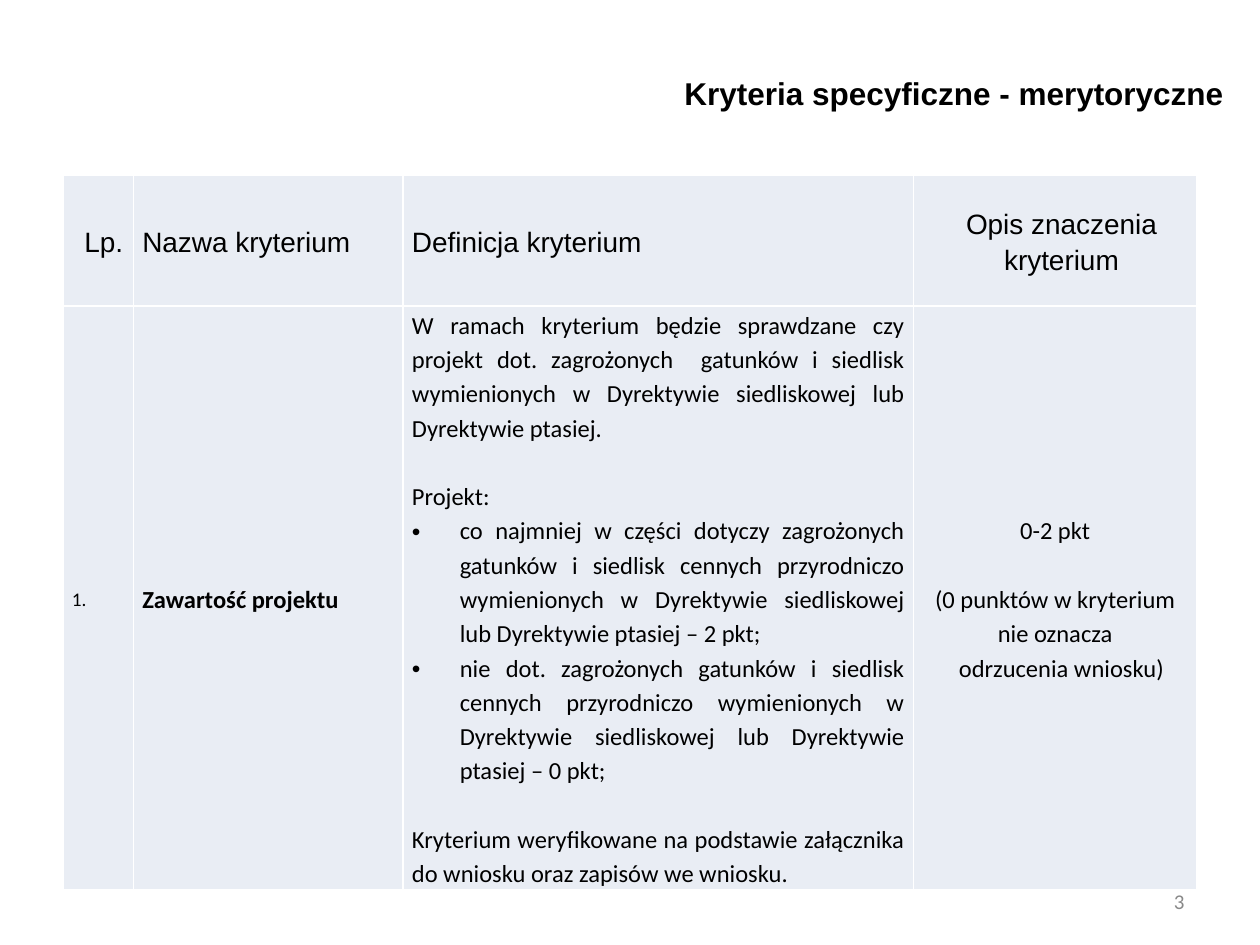
from lxml import etree
from pptx import Presentation
from pptx.dml.color import RGBColor
from pptx.enum.text import MSO_ANCHOR as Anchor, PP_ALIGN as Align
from pptx.oxml.ns import qn
from pptx.util import Inches, Pt

LINE_GAP = 19.6  # one line of 14 pt text at 1.15 spacing


def colour(value):
    return RGBColor.from_string(value)


def add_text(frame, text, first=False, size=14, font="Calibri", shade="000000", bold=False,
             align=Align.LEFT, spacing=None, before=0, after=0, indent=0, hanging=0, bullet=None):
    """Add one formatted paragraph to a text frame."""
    para = frame.paragraphs[0] if first else frame.add_paragraph()
    para.alignment = align
    if spacing:
        para.line_spacing = spacing
    para.space_before, para.space_after = Pt(before), Pt(after)
    props = para._p.get_or_add_pPr()
    props.set("marL", str(Inches(indent)))
    props.set("indent", str(Inches(-hanging)))
    if bullet:
        etree.SubElement(props, qn("a:buFont")).set("typeface", "Arial")
        etree.SubElement(props, qn("a:buChar")).set("char", bullet)
    span = para.add_run()
    span.text = text
    span.font.size, span.font.name, span.font.bold = Pt(size), font, bold
    span.font.color.rgb = colour(shade)


class CriteriaSlide:
    """Holds the table style and the current page."""
    cell_fill = "E9EDF4"
    border = "FFFFFF"
    side_margin = 0.07

    def __init__(self, page):
        self.page = page

    def text(self, left, top, width, height, text, anchor=Anchor.TOP, **style):
        box = self.page.shapes.add_textbox(Inches(left), Inches(top), Inches(width), Inches(height))
        frame = box.text_frame
        frame.word_wrap, frame.vertical_anchor = True, anchor
        add_text(frame, text, first=True, **style)

    def table(self, left, top, widths, heights, rows):
        table = self.page.shapes.add_table(
            len(heights), len(widths), Inches(left), Inches(top),
            Inches(sum(widths)), Inches(sum(heights))).table
        for column, width in zip(table.columns, widths):
            column.width = Inches(width)
        for row, height, contents in zip(table.rows, heights, rows):
            row.height = Inches(height)
            for cell, paragraphs in zip(row.cells, contents):
                self.cell(cell, paragraphs)

    def cell(self, cell, paragraphs):
        cell.margin_left = cell.margin_right = Inches(self.side_margin)
        cell.margin_top = cell.margin_bottom = 0
        cell.vertical_anchor = Anchor.MIDDLE
        props = cell._tc.get_or_add_tcPr()
        for side in ("lnL", "lnR", "lnT", "lnB"):
            line = etree.SubElement(props, qn(f"a:{side}"), w=str(Pt(1)))
            fill = etree.SubElement(line, qn("a:solidFill"))
            etree.SubElement(fill, qn("a:srgbClr"), val=self.border)
        cell.fill.solid()
        cell.fill.fore_color.rgb = colour(self.cell_fill)
        for number, (text, style) in enumerate(paragraphs):
            add_text(cell.text_frame, text, first=number == 0, spacing=1.15, **style)


def main():
    deck = Presentation()
    deck.slide_width, deck.slide_height = Inches(10), Inches(7.5)
    slide = CriteriaSlide(deck.slides.add_slide(deck.slide_layouts[6]))

    # Page number and title
    slide.text(7.17, 6.95, 2.33, 0.4, "3", anchor=Anchor.MIDDLE,
               size=12, shade="898989", align=Align.RIGHT)
    slide.text(5.21, 0.54, 4.6, 0.5, "Kryteria specyficzne - merytoryczne",
               size=18, font="Arial", bold=True, align=Align.RIGHT)

    # Paragraph styles of the table
    head = dict(size=16, font="Arial")
    inset = dict(indent=0.1, after=10)
    body = dict(align=Align.JUSTIFY)
    item = dict(body, indent=0.38, hanging=0.38, bullet="•")
    centred = dict(align=Align.CENTER)
    gap = dict(before=LINE_GAP)

    # Criteria table
    header = [
        [("Lp.", head | inset)],
        [("Nazwa kryterium", head)],
        [("Definicja kryterium", head | body)],
        [("Opis znaczenia kryterium", head | inset | centred)],
    ]
    criterion = [
        [("1.", dict(size=11, after=10))],
        [("Zawartość projektu", dict(bold=True))],
        [
            ("W ramach kryterium będzie sprawdzane czy projekt dot. zagrożonych  gatunków i siedlisk "
             "wymienionych w Dyrektywie siedliskowej lub Dyrektywie ptasiej.", body),
            ("Projekt:", body | gap),
            ("co najmniej w części dotyczy zagrożonych gatunków i siedlisk cennych przyrodniczo "
             "wymienionych w Dyrektywie siedliskowej lub Dyrektywie ptasiej – 2 pkt;", item),
            ("nie dot. zagrożonych gatunków i siedlisk cennych przyrodniczo wymienionych w "
             "Dyrektywie siedliskowej lub Dyrektywie ptasiej – 0 pkt;", item),
            ("Kryterium weryfikowane na podstawie załącznika do wniosku oraz zapisów we wniosku.",
             body | gap),
        ],
        [
            ("0-2 pkt", centred),
            ("(0 punktów w kryterium nie oznacza", centred | gap),
            ("odrzucenia wniosku)", centred | inset),
        ],
    ]
    slide.table(0.5, 1.39, [0.56, 2.14, 4.05, 2.25], [1.04, 4.63], [header, criterion])

    deck.save("out.pptx")


if __name__ == "__main__":
    main()
